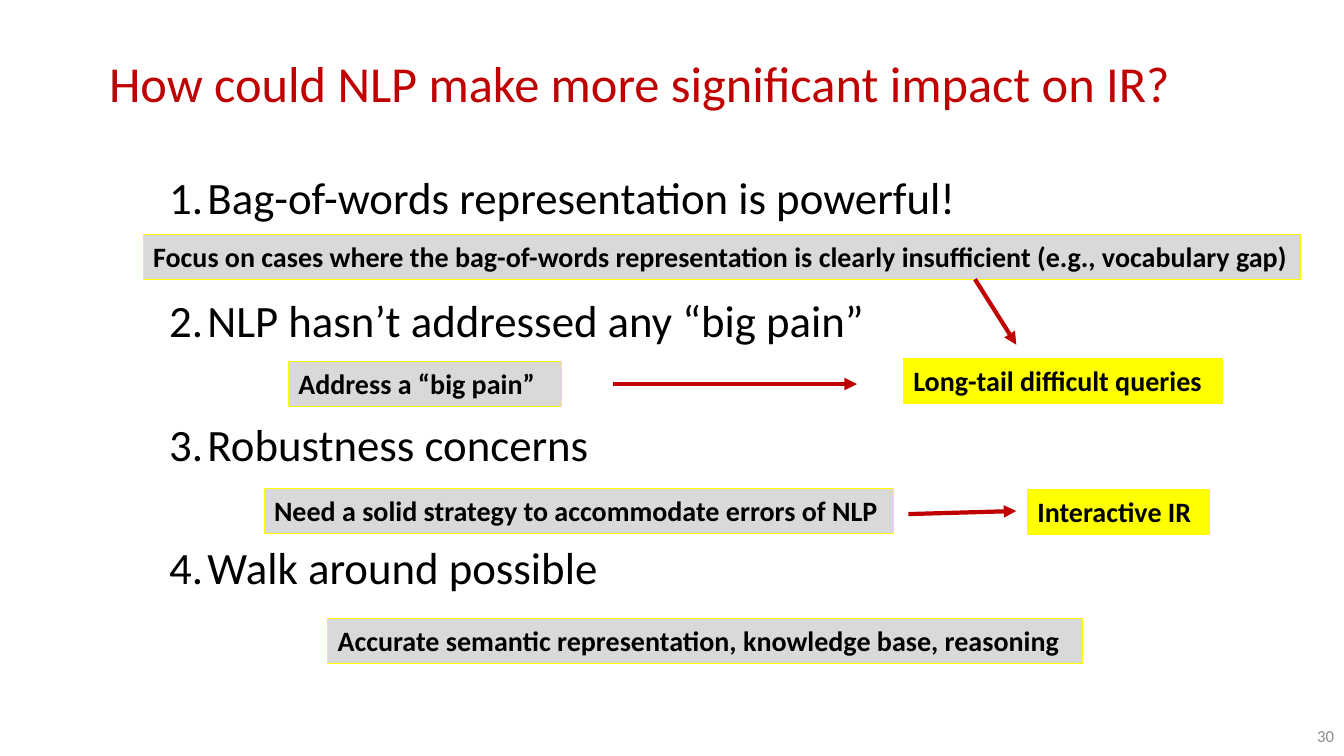
from dataclasses import dataclass

import lxml.etree
import pptx
import pptx.dml.color
import pptx.enum.shapes
import pptx.enum.text
import pptx.oxml.ns
import pptx.slide
import pptx.text.text
import pptx.util

Inches = pptx.util.Inches
Align = pptx.enum.text.PP_ALIGN
Anchor = pptx.enum.text.MSO_ANCHOR
qn = pptx.oxml.ns.qn

FONT = "Calibri"
LABEL_HEIGHT = 0.44
COLORS = {
    "accent": "C00000",
    "text": "000000",
    "answer": "D9D9D9",
    "highlight": "FFFF00",
    "page": "8C8C8C",
}


@dataclass
class Label:
    text: str
    left: float
    top: float
    width: float
    fill: str = "answer"


@dataclass
class Arrow:
    start: tuple[float, float]
    end: tuple[float, float]


CONCERNS = [
    "Bag-of-words representation is powerful!",
    "NLP hasn’t addressed any “big pain”",
    "Robustness concerns",
    "Walk around possible",
]
LABELS = [
    Label("Focus on cases where the bag-of-words representation is clearly "
          "insufficient (e.g., vocabulary gap)", 1.42, 2.33, 11.48),
    Label("Address a “big pain”", 2.86, 3.59, 2.71),
    Label("Need a solid strategy to accommodate errors of NLP", 2.62, 4.85, 6.24),
    Label("Accurate semantic representation, knowledge base, reasoning",
          3.25, 6.14, 7.49),
    Label("Long-tail difficult queries", 8.96, 3.56, 3.17, "highlight"),
    Label("Interactive IR", 10.19, 4.86, 1.81, "highlight"),
]
ARROWS = [
    Arrow((6.08, 3.81), (8.5, 3.81)),
    Arrow((9.67, 2.77), (10.08, 3.42)),
    Arrow((9.01, 5.1), (10.08, 5.07)),
]


def rgb(name: str) -> pptx.dml.color.RGBColor:
    return pptx.dml.color.RGBColor.from_string(COLORS[name])


def format_text(frame: pptx.text.text.TextFrame, size: int, color: str,
                align: Align = Align.LEFT, bold: bool = False) -> None:
    for paragraph in frame.paragraphs:
        paragraph.alignment = align
        for run in paragraph.runs:
            run.font.name = FONT
            run.font.size = pptx.util.Pt(size)
            run.font.bold = bold
            run.font.color.rgb = rgb(color)


def add_text(slide: pptx.slide.Slide, text: str, box: tuple[float, ...], size: int,
             color: str, align: Align = Align.LEFT,
             anchor: Anchor = Anchor.MIDDLE) -> pptx.text.text.TextFrame:
    frame = slide.shapes.add_textbox(*map(Inches, box)).text_frame
    frame.word_wrap = True
    frame.vertical_anchor = anchor
    frame.text = text
    format_text(frame, size, color, align)
    return frame


def number_paragraphs(frame: pptx.text.text.TextFrame) -> None:
    for index, paragraph in enumerate(frame.paragraphs):
        if index:
            paragraph.space_before = pptx.util.Pt(49.8)
        properties = paragraph._p.get_or_add_pPr()
        properties.set("marL", str(Inches(0.38)))
        properties.set("indent", str(Inches(-0.38)))
        bullet_font = lxml.etree.SubElement(properties, qn("a:buFont"))
        bullet_font.set("typeface", FONT)
        bullet = lxml.etree.SubElement(properties, qn("a:buAutoNum"))
        bullet.set("type", "arabicPeriod")


def add_label(slide: pptx.slide.Slide, label: Label) -> None:
    shape = slide.shapes.add_shape(
        pptx.enum.shapes.MSO_SHAPE.RECTANGLE, Inches(label.left), Inches(label.top),
        Inches(label.width), Inches(LABEL_HEIGHT))
    shape.shadow.inherit = False
    shape.fill.solid()
    shape.fill.fore_color.rgb = rgb(label.fill)
    shape.line.color.rgb = rgb("highlight")
    shape.line.width = pptx.util.Pt(0.75)
    frame = shape.text_frame
    frame.word_wrap = True
    frame.margin_right = 0
    frame.vertical_anchor = Anchor.TOP
    frame.text = label.text
    format_text(frame, 20, "text", bold=True)


def add_arrow(slide: pptx.slide.Slide, arrow: Arrow) -> None:
    connector = slide.shapes.add_connector(
        pptx.enum.shapes.MSO_CONNECTOR.STRAIGHT,
        *map(Inches, arrow.start + arrow.end))
    connector.line.color.rgb = rgb("accent")
    connector.line.width = pptx.util.Pt(3)
    head = lxml.etree.SubElement(connector.line._get_or_add_ln(), qn("a:tailEnd"))
    head.set("type", "triangle")
    lxml.etree.SubElement(connector._element.spPr, qn("a:effectLst"))


def main() -> None:
    presentation = pptx.Presentation()
    presentation.slide_width = Inches(13.33)
    presentation.slide_height = Inches(7.5)
    slide = presentation.slides.add_slide(presentation.slide_layouts[6])

    add_text(slide, "How could NLP make more significant impact on IR?",
             (0.68, 0.01, 11.33, 1.61), 36, "accent", Align.CENTER)
    add_text(slide, "30", (10.22, 7.1, 3.11, 0.4), 12, "page", Align.RIGHT)
    concerns = add_text(slide, "\n".join(CONCERNS), (1.58, 1.63, 8.5, 4.38),
                        32, "text", anchor=Anchor.TOP)
    number_paragraphs(concerns)
    for label in LABELS:
        add_label(slide, label)
    for arrow in ARROWS:
        add_arrow(slide, arrow)

    presentation.save("out.pptx")


if __name__ == "__main__":
    main()
